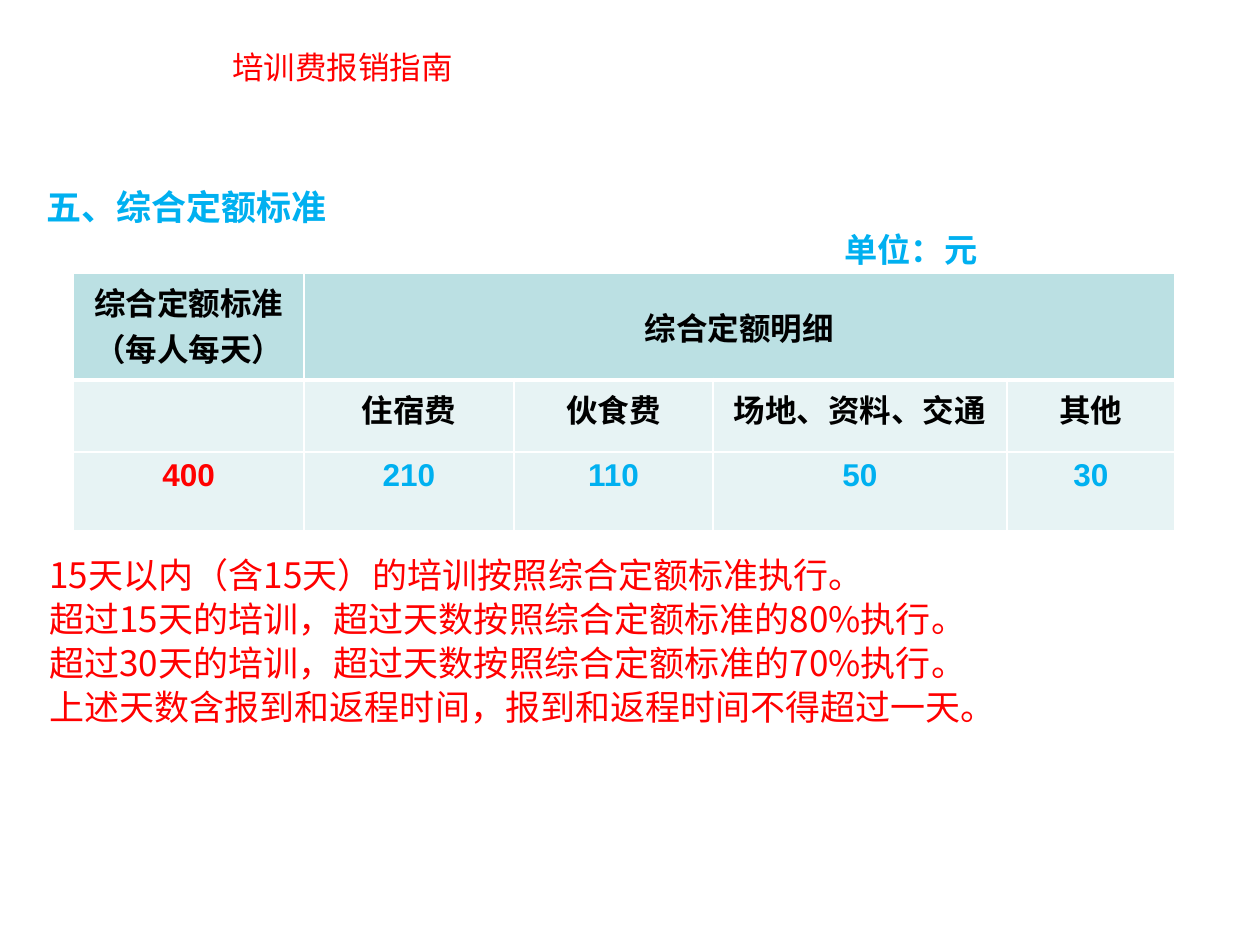
import pptx
import pptx.util
import pptx.dml.color
import pptx.enum.text
import pptx.oxml
import pptx.oxml.ns

Pt = pptx.util.Pt
ANCHOR = pptx.enum.text.MSO_ANCHOR
CENTER = pptx.enum.text.PP_ALIGN.CENTER
LEFT = pptx.enum.text.PP_ALIGN.LEFT

THEME = {
    "red": "FF0000", "blue": "00B0F0", "black": "000000", "white": "FFFFFF",
    "header": "BBE0E3", "body": "E7F3F4",
    "latin": "Arial", "chinese": "Noto Sans CJK SC",
    "heading": 20, "unit": 19, "label": 18,
}

GUIDE = "培训费报销指南"
HEADING = "五、综合定额标准"
UNIT = "单位：元"
TABLE = [
    ["综合定额标准\n（每人每天）", "综合定额明细", "", "", ""],
    ["", "住宿费", "伙食费", "场地、资料、交通", "其他"],
    ["400", "210", "110", "50", "30"],
]
COLUMNS = [231, 210, 199, 294, 168]
ROWS = [107, 72, 79]
NOTES = [
    "15天以内（含15天）的培训按照综合定额标准执行。",
    "超过15天的培训，超过天数按照综合定额标准的80%执行。",
    "超过30天的培训，超过天数按照综合定额标准的70%执行。",
    "上述天数含报到和返程时间，报到和返程时间不得超过一天。",
]


def px(count):
    """Turn px, 126 to the inch, into EMU."""
    return round(count * 914400 / 126)


def color(name):
    return pptx.dml.color.RGBColor.from_string(THEME[name])


def write(para, text, size, ink, face="latin", bold=False, align=LEFT,
          indent=0, spacing=None):
    layout = {"alignment": align, "line_spacing": spacing}
    for key, value in layout.items():
        setattr(para, key, value)
    if indent:
        para._p.get_or_add_pPr().set("marL", str(px(indent)))
    span = para.add_run()
    span.text = text
    style = {"name": THEME[face], "size": Pt(THEME[size]), "bold": bold}
    for key, value in style.items():
        setattr(span.font, key, value)
    span.font.color.rgb = color(ink)
    east = pptx.oxml.parse_xml(
        f'<a:ea {pptx.oxml.ns.nsdecls("a")} typeface="{THEME["chinese"]}"/>')
    span.font._element.append(east)


def paragraphs(frame, count):
    """Give the frame's first paragraph and as many new ones as needed."""
    return [frame.paragraphs[0]] + [frame.add_paragraph() for _ in range(count - 1)]


def place(shape, left, top, width, height):
    box = {"left": left, "top": top, "width": width, "height": height}
    for key, value in box.items():
        setattr(shape, key, px(value))


def add_text(page, *area):
    frame = page.shapes.add_textbox(*map(px, area)).text_frame
    frame.word_wrap = True
    return frame


def set_borders(cell, row):
    widths = {"L": 1, "R": 1, "T": 3 if row == 1 else 1, "B": 3 if row == 0 else 1}
    for index, (side, width) in enumerate(widths.items()):
        line = pptx.oxml.parse_xml(
            f'<a:ln{side} {pptx.oxml.ns.nsdecls("a")} w="{Pt(width)}"><a:solidFill>'
            f'<a:srgbClr val="{THEME["white"]}"/></a:solidFill></a:ln{side}>')
        cell._tc.get_or_add_tcPr().insert(index, line)


def add_heading(page):
    title = page.shapes.title
    place(title, 10, 179, 1250, 640)
    frame = title.text_frame
    frame.vertical_anchor = ANCHOR.TOP
    frame.auto_size = pptx.enum.text.MSO_AUTO_SIZE.NONE
    lines = [(HEADING, "heading", 24), (UNIT, "unit", 822)]
    for para, (text, size, indent) in zip(paragraphs(frame, len(lines)), lines):
        write(para, text, size, "blue", bold=True, indent=indent, spacing=Pt(24))


def ink_for(row, column):
    if row < 2:
        return "black"
    return "red" if column == 0 else "blue"


def add_quota_table(page):
    area = (73, 273, sum(COLUMNS), sum(ROWS))
    table = page.shapes.add_table(len(ROWS), len(COLUMNS), *map(px, area)).table
    for column, width in zip(table.columns, COLUMNS):
        column.width = px(width)
    for row, height in zip(table.rows, ROWS):
        row.height = px(height)
    for r, texts in enumerate(TABLE):
        for c, text in enumerate(texts):
            cell = table.cell(r, c)
            cell.fill.solid()
            cell.fill.fore_color.rgb = color("body" if r else "header")
            set_borders(cell, r)
            if text:
                lines = text.split("\n")
                for para, line in zip(paragraphs(cell.text_frame, len(lines)), lines):
                    write(para, line, "label", ink_for(r, c), bold=True, align=CENTER)
    detail = table.cell(0, 1)
    detail.merge(table.cell(0, len(COLUMNS) - 1))
    detail.vertical_anchor = ANCHOR.MIDDLE


def main():
    deck = pptx.Presentation()
    deck.slide_width, deck.slide_height = px(1260), px(945)
    page = deck.slides.add_slide(deck.slide_layouts[5])
    add_heading(page)
    guide = add_text(page, 220, 42, 693, 69)
    write(guide.paragraphs[0], GUIDE, "label", "red", "chinese")
    add_quota_table(page)
    notes = add_text(page, 21, 546, 1239, 209)
    for para, text in zip(paragraphs(notes, len(NOTES)), NOTES):
        write(para, text, "heading", "red", "chinese", indent=16, spacing=Pt(25))
    deck.save("out.pptx")


if __name__ == "__main__":
    main()
